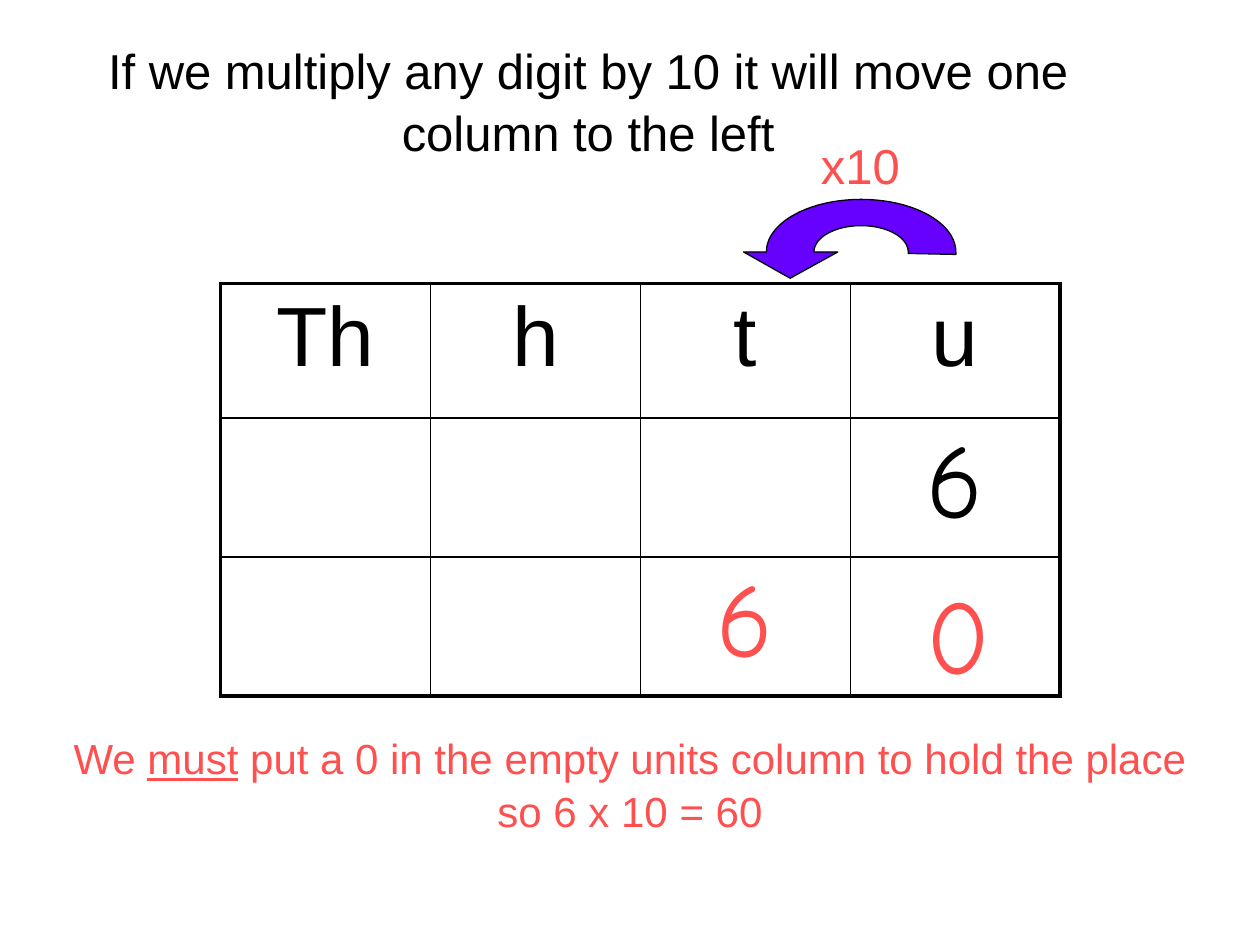
"""Build a place-value slide showing how multiplying by 10 moves a digit left."""
from math import cos, pi, sin

from lxml import etree
from pptx import Presentation
from pptx.dml.color import RGBColor
from pptx.enum.text import MSO_ANCHOR, MSO_AUTO_SIZE, PP_ALIGN
from pptx.oxml.ns import qn
from pptx.util import Cm, Pt

CENTER, LEFT = PP_ALIGN.CENTER, PP_ALIGN.LEFT
TOP = MSO_ANCHOR.TOP
NO_AUTOFIT = MSO_AUTO_SIZE.NONE
BLACK = RGBColor(0x00, 0x00, 0x00)
CORAL = RGBColor(0xFF, 0x50, 0x50)
VIOLET = RGBColor(0x66, 0x00, 0xFF)
PRINT, HANDWRITING = "Arial", "Comic Neue"


def style(paragraph, font_name, size, color, align=CENTER):
    paragraph.alignment = align
    for run in paragraph.runs:
        run.font.name = font_name
        run.font.size = Pt(size)
        run.font.bold = False
        run.font.color.rgb = color


def add_border(cell, side, width):
    line = etree.SubElement(cell._tc.get_or_add_tcPr(), qn(f"a:ln{side}"), w=str(Pt(width)))
    fill = etree.SubElement(line, qn("a:solidFill"))
    etree.SubElement(fill, qn("a:srgbClr"), val=str(BLACK))


prs = Presentation()
prs.slide_width, prs.slide_height = Cm(25.4), Cm(19.05)
slide = prs.slides.add_slide(prs.slide_layouts[5])

title = slide.shapes.title
title.left, title.top, title.width, title.height = Cm(0.64), Cm(0.64), Cm(22.43), Cm(2.64)
title.text_frame.text = "If we multiply any digit by 10 it will move one column to the left"
title.text_frame.vertical_anchor = TOP
title.text_frame.auto_size = NO_AUTOFIT
rule = title.text_frame.paragraphs[0]
style(rule, PRINT, 28, BLACK)
rule.line_spacing = 1.05
rule.space_before = Pt(1.5)

digits = [["Th", "h", "t", "u"], ["", "", "", "6"], ["", "", "6", ""]]
row_looks = [(PRINT, 48, BLACK), (HANDWRITING, 60, BLACK), (HANDWRITING, 60, CORAL)]
row_heights = [2.71, 2.8, 2.8]
last_row, last_column = len(digits) - 1, len(digits[0]) - 1

place_values = slide.shapes.add_table(
    3, 4, Cm(4.45), Cm(5.72), Cm(16.92), Cm(sum(row_heights))
).table
place_values.first_row = False
place_values.horz_banding = False
for column in place_values.columns:
    column.width = Cm(4.23)
for r, (row_digits, look, height) in enumerate(zip(digits, row_looks, row_heights)):
    place_values.rows[r].height = Cm(height)
    for c, digit in enumerate(row_digits):
        cell = place_values.cell(r, c)
        cell.text = digit
        style(cell.text_frame.paragraphs[0], *look)
        outer_sides = {"L": c == 0, "R": c == last_column, "T": r == 0, "B": r == last_row}
        for side, is_outer in outer_sides.items():
            add_border(cell, side, 2.25 if is_outer else 1)
        cell.fill.background()

center_x, center_y = 17.36, 5.08
angles = [pi * step / 40 for step in range(41)]
outer_arc = [(center_x + 1.91 * cos(a), center_y - 1.06 * sin(a)) for a in angles]
inner_arc = [(center_x + 0.95 * cos(a), center_y - 0.53 * sin(a)) for a in reversed(angles)]
head = [(14.99, 5.08), (15.93, 5.61), (16.89, 5.08)]
tail = [(18.31, 5.11), (19.27, 5.13)]
outline = [(Cm(x), Cm(y)) for x, y in outer_arc + head + inner_arc + tail]
builder = slide.shapes.build_freeform(*outline[0])
builder.add_line_segments(outline[1:], close=True)
move_arrow = builder.convert_to_shape()
move_arrow.shadow.inherit = False
move_arrow.fill.solid()
move_arrow.fill.fore_color.rgb = VIOLET
move_arrow.line.color.rgb = BLACK
move_arrow.line.width = Pt(0.75)

captions = [
    (["x10"], (16.3, 2.54, 2.54, 1.45), PRINT, 28, LEFT),
    (
        ["We ", "must", " put a 0 in the empty units column to hold the place so 6 x 10 = 60"],
        (1.06, 14.6, 23.28, 2.31), PRINT, 24, CENTER,
    ),
    (["0"], (18.42, 11.22, 2.54, 2.8), HANDWRITING, 60, LEFT),
]
for parts, place, font_name, size, align in captions:
    frame = slide.shapes.add_textbox(*[Cm(length) for length in place]).text_frame
    frame.word_wrap = True
    caption = frame.paragraphs[0]
    for part in parts:
        run = caption.add_run()
        run.text = part
        run.font.underline = True if part == "must" else None
    style(caption, font_name, size, CORAL, align)
    caption.line_spacing = 1.05
    caption.space_before = Pt(1.5)

prs.save("out.pptx")
